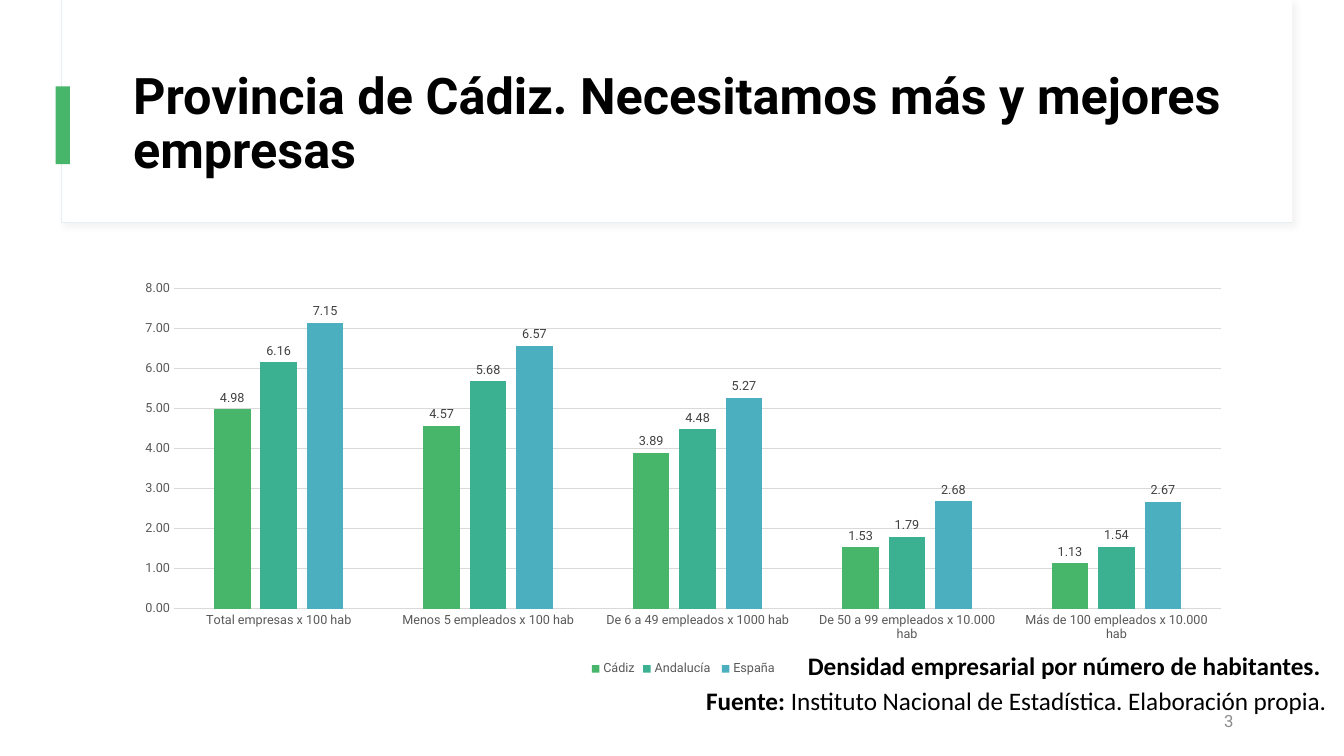
from dataclasses import dataclass

from lxml import etree
from pptx import Presentation
from pptx import util as u
from pptx.chart import data as chart_data
from pptx.dml import color
from pptx.enum import chart as chart_enum
from pptx.enum import shapes, text
from pptx.oxml import ns

COLORS = {
    "white": "FFFFFF",
    "black": "000000",
    "green": "47B56A",
    "teal": "3BB192",
    "blue": "4BAFC0",
    "panel_edge": "E5EEF0",
    "shadow": "D9D9D9",
    "grid": "D9D9D9",
    "axis_text": "595959",
    "label_text": "404040",
    "page_number": "8C8C8C",
}
HEADING_FONT = "Roboto"
CAPTION_FONT = "Calibri"
NUMBER_FORMAT = "#,##0.00"


@dataclass
class Box:
    left: float
    top: float
    width: float
    height: float

    def lengths(self) -> tuple:
        return tuple(u.Cm(n) for n in (self.left, self.top, self.width, self.height))


@dataclass
class Panel:
    box: Box
    fill: str
    line: str = ""
    shadow: bool = False


@dataclass
class Series:
    name: str
    values: tuple
    color: str


@dataclass
class Run:
    text: str
    bold: bool = False


PANELS = [
    Panel(Box(1.55, 0, 31.01, 5.61), "white", "panel_edge", True),
    Panel(Box(1.57, 0, 30.99, 5.59), "white"),
    Panel(Box(1.4, 2.18, 0.36, 1.96), "green"),
]
CATEGORIES = [
    "Total empresas x 100 hab",
    "Menos 5 empleados x 100 hab",
    "De 6 a 49 empleados x 1000 hab",
    "De 50 a 99 empleados x 10.000 hab",
    "Más de 100 empleados x 10.000 hab",
]
SERIES = [
    Series("Cádiz", (4.98, 4.57, 3.89, 1.53, 1.13), "green"),
    Series("Andalucía ", (6.16, 5.68, 4.48, 1.79, 1.54), "teal"),
    Series("España", (7.15, 6.57, 5.27, 2.68, 2.67), "blue"),
]
CAPTION = [
    [Run("Densidad empresarial por número de habitantes. ", True)],
    [Run("Fuente:", True), Run(" Instituto Nacional de Estadística. Elaboración propia.")],
]


def rgb(name: str) -> color.RGBColor:
    return color.RGBColor.from_string(COLORS[name])


def format_font(font, size: float, color_name: str, name: str = HEADING_FONT, bold: bool = False) -> None:
    font.size = u.Pt(size)
    font.name = name
    font.bold = bold
    font.color.rgb = rgb(color_name)


def format_line(line, color_name: str) -> None:
    line.color.rgb = rgb(color_name)
    line.width = u.Pt(0.75)


def write_text(shape, paragraphs: list, *, size: float, color_name: str, font: str = HEADING_FONT,
               align=text.PP_ALIGN.LEFT, anchor=text.MSO_ANCHOR.TOP,
               spacing: float = 1.0, fit=text.MSO_AUTO_SIZE.NONE) -> None:
    frame = shape.text_frame
    frame.word_wrap = True
    frame.auto_size = fit
    frame.vertical_anchor = anchor
    for index, runs in enumerate(paragraphs):
        paragraph = frame.add_paragraph() if index else frame.paragraphs[0]
        paragraph.alignment = align
        paragraph.line_spacing = spacing
        for item in runs:
            run = paragraph.add_run()
            run.text = item.text
            format_font(run.font, size, color_name, font, item.bold)


def add_soft_shadow(shape) -> None:
    effects = shape.element.spPr.find(ns.qn("a:effectLst"))
    shadow = etree.SubElement(effects, ns.qn("a:outerShdw"), blurRad=str(u.Pt(4)),
                              dist=str(u.Pt(3)), dir="2700000", algn="tl", rotWithShape="0")
    tint = etree.SubElement(shadow, ns.qn("a:srgbClr"), val=COLORS["shadow"])
    etree.SubElement(tint, ns.qn("a:alpha"), val="30000")


def add_panel(slide, panel: Panel) -> None:
    shape = slide.shapes.add_shape(shapes.MSO_SHAPE.RECTANGLE, *panel.box.lengths())
    shape.shadow.inherit = False
    shape.fill.solid()
    shape.fill.fore_color.rgb = rgb(panel.fill)
    if panel.line:
        format_line(shape.line, panel.line)
    else:
        shape.line.fill.background()
    if panel.shadow:
        add_soft_shadow(shape)


def add_title(slide) -> None:
    title = slide.shapes.title
    title.left, title.top, title.width, title.height = Box(3.1, 1.52, 28.24, 3.28).lengths()
    write_text(title, [[Run("Provincia de Cádiz. Necesitamos más y mejores empresas", True)]],
               size=36, color_name="black", anchor=text.MSO_ANCHOR.MIDDLE, spacing=0.9)
    title.element.getparent().append(title.element)


def format_axes(chart) -> None:
    for axis in (chart.category_axis, chart.value_axis):
        axis.major_tick_mark = chart_enum.XL_TICK_MARK.NONE
        axis.minor_tick_mark = chart_enum.XL_TICK_MARK.NONE
        format_font(axis.tick_labels.font, 9, "axis_text")
    format_line(chart.category_axis.format.line, "grid")
    values = chart.value_axis
    values.minimum_scale, values.maximum_scale, values.major_unit = 0, 8, 1
    values.format.line.fill.background()
    values.has_major_gridlines = True
    format_line(values.major_gridlines.format.line, "grid")
    values.tick_labels.number_format = NUMBER_FORMAT
    values.tick_labels.number_format_is_linked = False


def add_density_chart(slide) -> None:
    table = chart_data.CategoryChartData(number_format=NUMBER_FORMAT)
    table.categories = CATEGORIES
    for item in SERIES:
        table.add_series(item.name, item.values)
    chart = slide.shapes.add_chart(chart_enum.XL_CHART_TYPE.COLUMN_CLUSTERED,
                                   *Box(3.1, 6.88, 28.24, 10.26).lengths(), table).chart
    chart.has_title = False
    format_font(chart.font, 10, "black")
    format_axes(chart)
    chart.has_legend = True
    chart.legend.position = chart_enum.XL_LEGEND_POSITION.BOTTOM
    chart.legend.include_in_layout = False
    format_font(chart.legend.font, 9, "axis_text")
    plot = chart.plots[0]
    plot.gap_width, plot.overlap, plot.vary_by_categories = 219, -27, False
    for series, item in zip(plot.series, SERIES):
        series.format.fill.solid()
        series.format.fill.fore_color.rgb = rgb(item.color)
        labels = series.data_labels
        labels.show_value = True
        labels.position = chart_enum.XL_LABEL_POSITION.OUTSIDE_END
        labels.number_format = NUMBER_FORMAT
        labels.number_format_is_linked = False
        format_font(labels.font, 9, "label_text")


def main() -> None:
    presentation = Presentation()
    presentation.slide_width, presentation.slide_height = u.Cm(33.87), u.Cm(19.05)
    slide = presentation.slides.add_slide(presentation.slide_layouts[5])
    for panel in PANELS:
        add_panel(slide, panel)
    add_title(slide)
    add_density_chart(slide)
    caption = slide.shapes.add_textbox(*Box(4.39, 16.15, 29.29, 1.98).lengths())
    write_text(caption, CAPTION, size=18, color_name="black", font=CAPTION_FONT,
               align=text.PP_ALIGN.RIGHT, spacing=1.15, fit=text.MSO_AUTO_SIZE.SHAPE_TO_FIT_TEXT)
    page_number = slide.shapes.add_textbox(*Box(23.72, 17.65, 7.62, 1.02).lengths())
    write_text(page_number, [[Run("3")]], size=12, color_name="page_number",
               align=text.PP_ALIGN.RIGHT, anchor=text.MSO_ANCHOR.MIDDLE)
    presentation.save("out.pptx")


if __name__ == "__main__":
    main()
